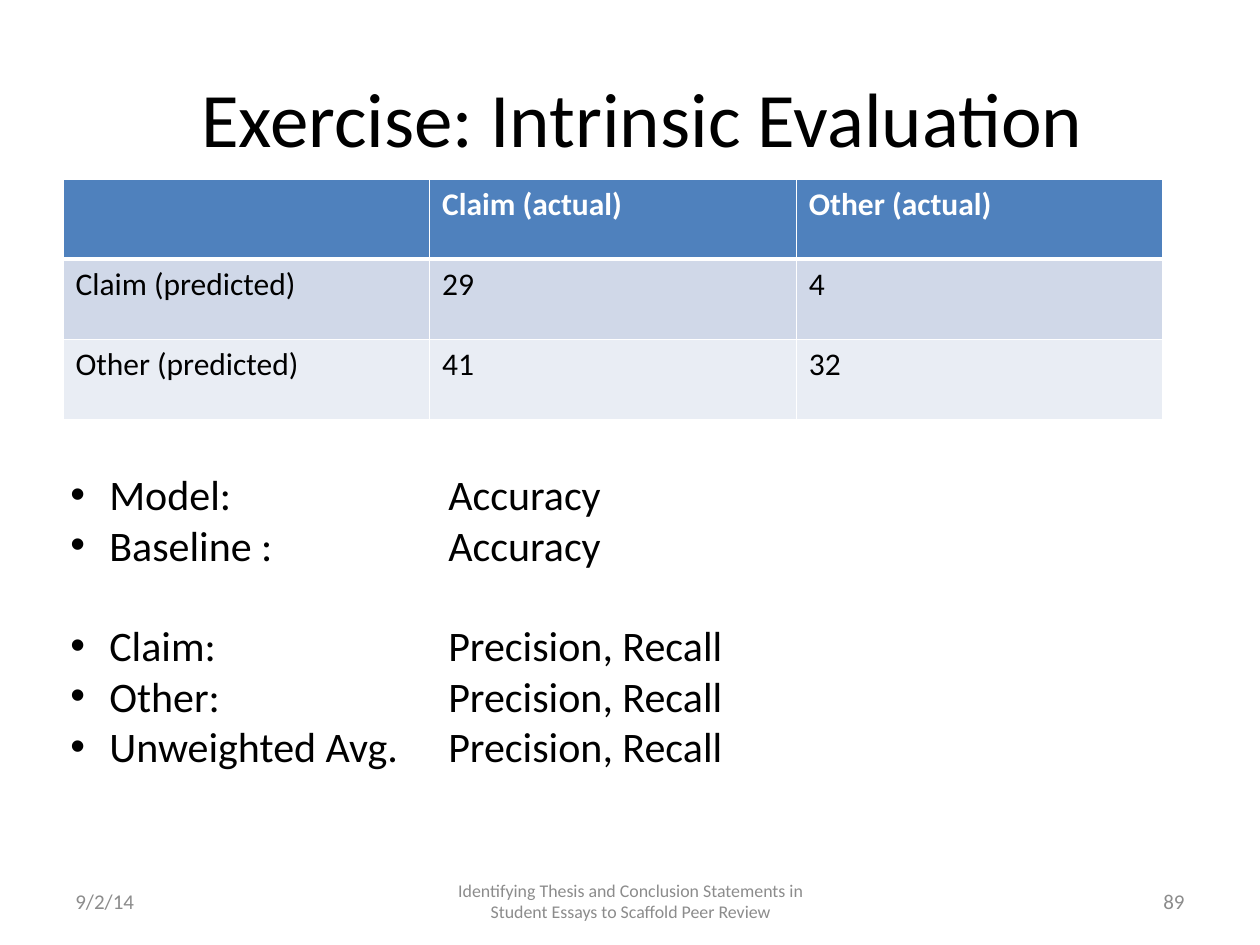
from lxml import etree
from pptx import Presentation, util as u
from pptx.dml.color import RGBColor
from pptx.enum import text
from pptx.oxml.ns import qn

FONT = "Calibri"
BLACK, WHITE, GREY = "000000", "FFFFFF", "8C8C8C"
ROW_FILLS = ["4F81BD", "D0D8E8", "E9EDF4"]

TITLE = "Exercise: Intrinsic Evaluation"
CONFUSION = [
    ["", "Claim (actual)", "Other (actual)"],
    ["Claim (predicted)", "29", "4"],
    ["Other (predicted)", "41", "32"],
]
# Each group of measures is set apart by one line
MEASURES = [
    [("Model:", "Accuracy"), ("Baseline :", "Accuracy")],
    [("Claim:", "Precision, Recall"), ("Other:", "Precision, Recall"),
     ("Unweighted Avg.", "Precision, Recall")],
]
# Text, left, width, size, alignment
FOOTERS = [
    ("9/2/14", 0.5, 2.33, 12, text.PP_ALIGN.LEFT),
    ("Identifying Thesis and Conclusion Statements in Student Essays "
     "to Scaffold Peer Review", 3.42, 3.17, 10.2, text.PP_ALIGN.CENTER),
    ("89", 7.17, 2.33, 12, text.PP_ALIGN.RIGHT),
]


def color(value):
    return RGBColor.from_string(value)


def style(paragraph, size, value, align=text.PP_ALIGN.LEFT, bold=False):
    paragraph.alignment = align
    font = paragraph.font
    font.name, font.size, font.bold = FONT, u.Pt(size), bold
    font.color.rgb = color(value)


def add_box(slide, left, top, width, height, anchor=text.MSO_ANCHOR.MIDDLE):
    box = slide.shapes.add_textbox(*map(u.Inches, (left, top, width, height)))
    frame = box.text_frame
    frame.word_wrap = True
    frame.vertical_anchor = anchor
    return frame


def add_line(slide, words, place, size, value, align):
    paragraph = add_box(slide, *place).paragraphs[0]
    paragraph.text = words
    style(paragraph, size, value, align)


def set_borders(cell, widths):
    properties = cell._tc.get_or_add_tcPr()
    for index, (side, width) in enumerate(widths.items()):
        line = etree.Element(qn(f"a:ln{side}"), w=str(u.Pt(width)))
        fill = etree.SubElement(line, qn("a:solidFill"))
        etree.SubElement(fill, qn("a:srgbClr"), val=WHITE)
        properties.insert(index, line)


def add_confusion_table(slide):
    rows, columns = len(CONFUSION), len(CONFUSION[0])
    place = map(u.Inches, (0.5, 1.42, 8.73, 1.91))
    table = slide.shapes.add_table(rows, columns, *place).table
    for r, row in enumerate(CONFUSION):
        header = r == 0
        for c, words in enumerate(row):
            cell = table.cell(r, c)
            cell.text = words
            style(cell.text_frame.paragraphs[0], 18,
                  WHITE if header else BLACK, bold=header)
            cell.fill.solid()
            cell.fill.fore_color.rgb = color(ROW_FILLS[r])
            set_borders(cell, {"L": 1, "R": 1, "T": 3 if r == 1 else 1,
                               "B": 3 if header else 1})


def add_measures(slide):
    frame = add_box(slide, 0.46, 3.67, 8.73, 2.52, text.MSO_ANCHOR.TOP)
    paragraph = None
    for g, group in enumerate(MEASURES):
        for i, pair in enumerate(group):
            paragraph = frame.add_paragraph() if paragraph else frame.paragraphs[0]
            paragraph.text = "\t".join(pair)
            style(paragraph, 24, BLACK)
            if g and i == 0:
                paragraph.space_before = u.Pt(28.8)
            # Hanging bullet, second column at the first tab
            properties = paragraph._p.get_or_add_pPr()
            properties.set("marL", str(u.Inches(0.31)))
            properties.set("indent", str(u.Inches(-0.31)))
            properties.set("defTabSz", str(u.Inches(3)))
            bullet_font = etree.Element(qn("a:buFont"), typeface="Arial")
            bullet = etree.Element(qn("a:buChar"), char="•")
            defaults = properties.find(qn("a:defRPr"))
            defaults.addprevious(bullet_font)
            defaults.addprevious(bullet)


def main():
    presentation = Presentation()
    presentation.slide_width, presentation.slide_height = u.Inches(10), u.Inches(7.5)
    slide = presentation.slides.add_slide(presentation.slide_layouts[6])

    # Footer
    for words, left, width, size, align in FOOTERS:
        add_line(slide, words, (left, 6.95, width, 0.4), size, GREY, align)

    # Title, table and list of measures
    add_line(slide, TITLE, (0.5, 0.3, 9.2, 1.25), 44, BLACK, text.PP_ALIGN.CENTER)
    add_confusion_table(slide)
    add_measures(slide)
    presentation.save("out.pptx")


if __name__ == "__main__":
    main()
